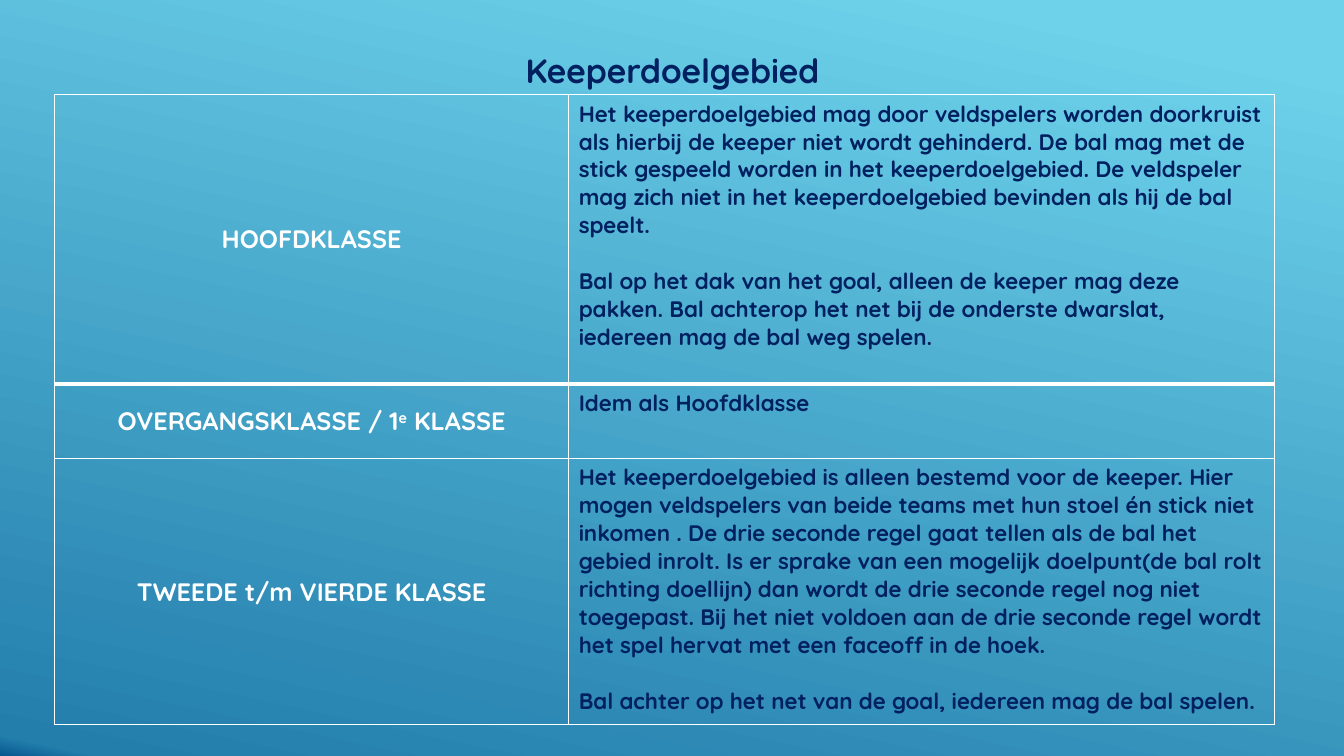
from copy import deepcopy
from lxml import etree
from pptx import Presentation, util as u
from pptx.dml import color as c
from pptx.enum import text as t
from pptx.oxml import ns

WHITE, NAVY = "FFFFFF", "002060"
WIDTH, HEIGHT = u.Inches(13.33), u.Inches(7.5)
COLUMNS = [u.Inches(5.1), u.Inches(7)]
ROWS = [u.Inches(2.87), u.Inches(0.74), u.Inches(2.64)]
LEFT, TOP = u.Inches(0.54), u.Inches(0.94)


def rgb(value):
    return c.RGBColor.from_string(value)


def write(paragraph, content, size, color, alignment):
    paragraph.alignment = alignment
    for index, part in enumerate(content.split("^")):
        run = paragraph.add_run()
        run.text = part
        values = {"name": "Quicksand", "size": u.Pt(size), "bold": True}
        for name, value in values.items():
            setattr(run.font, name, value)
        run.font.color.rgb = rgb(color)
        if index == 1:
            run.font._element.set("baseline", "30000")


presentation = Presentation()
presentation.slide_width, presentation.slide_height = WIDTH, HEIGHT
slide = presentation.slides.add_slide(presentation.slide_layouts[5])

background = slide.background.fill
background.gradient()
background.gradient_angle = 258
stop_list = slide.element.find(".//" + ns.qn("a:gsLst"))
stop_list.append(deepcopy(stop_list[-1]))
stops = [(0.07, "6ED2EB"), (0.98, "237EAC"), (1, "06588E")]
for stop, (position, color) in zip(background.gradient_stops, stops):
    stop.position = position
    stop.color.rgb = rgb(color)

title = slide.shapes.title
title_place = {"left": u.Inches(4.2), "top": u.Inches(0.44),
               "width": u.Inches(4.94), "height": u.Inches(0.5)}
for name, value in title_place.items():
    setattr(title, name, value)
title_format = {"word_wrap": True, "auto_size": t.MSO_AUTO_SIZE.NONE,
                "vertical_anchor": t.MSO_ANCHOR.MIDDLE}
for name, value in title_format.items():
    setattr(title.text_frame, name, value)
write(title.text_frame.paragraphs[0], "Keeperdoelgebied", 24, NAVY, t.PP_ALIGN.CENTER)

rules = [
    ("HOOFDKLASSE", [
        "Het keeperdoelgebied mag door veldspelers worden doorkruist als hierbij "
        "de keeper niet wordt gehinderd. De bal mag met de stick gespeeld worden "
        "in het keeperdoelgebied. De veldspeler mag zich niet in het "
        "keeperdoelgebied bevinden als hij de bal speelt.",
        "Bal op het dak van het goal, alleen de keeper mag deze pakken. Bal "
        "achterop het net bij de onderste dwarslat, iedereen mag de bal weg spelen.",
    ]),
    ("OVERGANGSKLASSE / 1^e^ KLASSE", ["Idem als Hoofdklasse"]),
    ("TWEEDE t/m VIERDE KLASSE", [
        "Het keeperdoelgebied is alleen bestemd voor de keeper. Hier mogen "
        "veldspelers van beide teams met hun stoel én stick niet inkomen . De drie "
        "seconde regel gaat tellen als de bal het gebied inrolt. Is er sprake van "
        "een mogelijk doelpunt(de bal rolt richting doellijn) dan wordt de drie "
        "seconde regel nog niet toegepast. Bij het niet voldoen aan de drie seconde "
        "regel wordt het spel hervat met een faceoff in de hoek.",
        "Bal achter op het net van de goal, iedereen mag de bal spelen.",
    ]),
]

table = slide.shapes.add_table(len(ROWS), len(COLUMNS), LEFT, TOP, sum(COLUMNS), sum(ROWS)).table
table.first_row = table.horz_banding = False
for column, width in zip(table.columns, COLUMNS):
    column.width = width
for row, height in zip(table.rows, ROWS):
    row.height = height

for row_index, (league, paragraphs) in enumerate(rules):
    league_cell, rule_cell = table.rows[row_index].cells
    league_cell.vertical_anchor = t.MSO_ANCHOR.MIDDLE
    write(league_cell.text_frame.paragraphs[0], league, 18, WHITE, t.PP_ALIGN.CENTER)
    for index, content in enumerate(paragraphs):
        frame = rule_cell.text_frame
        paragraph = frame.add_paragraph() if index else frame.paragraphs[0]
        paragraph.space_before = u.Pt(20 * index)
        write(paragraph, content, 16, NAVY, t.PP_ALIGN.LEFT)
    for cell in (league_cell, rule_cell):
        properties = cell._tc.get_or_add_tcPr()
        for edge in ("lnL", "lnR", "lnT", "lnB"):
            thick = (row_index, edge) in [(0, "lnB"), (1, "lnT")]
            line = etree.SubElement(properties, ns.qn("a:" + edge), w=str(u.Pt(3 if thick else 1)))
            fill = etree.SubElement(line, ns.qn("a:solidFill"))
            etree.SubElement(fill, ns.qn("a:srgbClr"), val=WHITE)
        cell.fill.background()

presentation.save("out.pptx")
